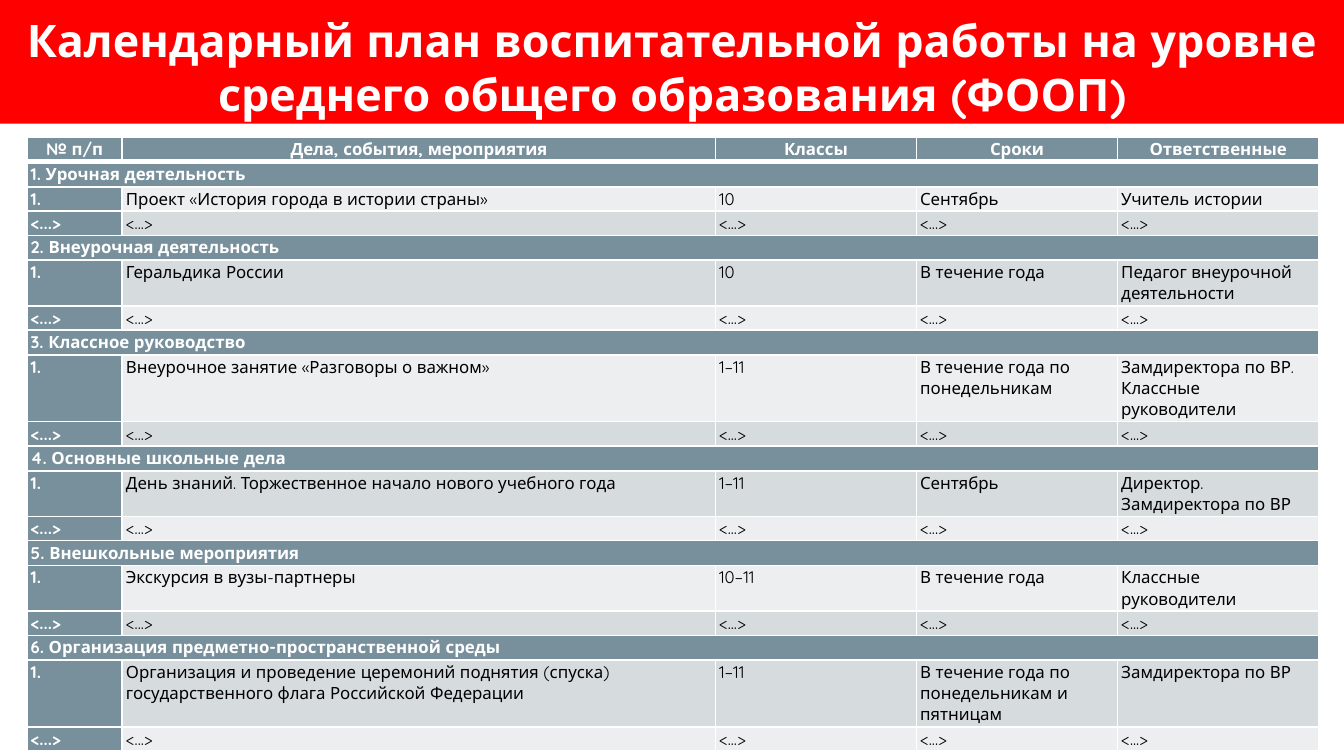
from lxml import etree
from pptx import Presentation
from pptx.dml.color import RGBColor
from pptx.enum.shapes import MSO_SHAPE
from pptx.enum.text import MSO_ANCHOR, PP_ALIGN
from pptx.oxml.ns import qn
from pptx.util import Cm, Pt

RECTANGLE = MSO_SHAPE.RECTANGLE
TOP = MSO_ANCHOR.TOP
LEFT, CENTER = PP_ALIGN.LEFT, PP_ALIGN.CENTER

RED = RGBColor(0xFF, 0x00, 0x00)
WHITE = RGBColor(0xFF, 0xFF, 0xFF)
BLACK = RGBColor(0x00, 0x00, 0x00)
SLATE = RGBColor(0x78, 0x90, 0x9C)
PALE = RGBColor(0xEC, 0xEE, 0xEF)
GREY = RGBColor(0xD6, 0xDB, 0xDE)

TITLE = "Календарный план воспитательной работы на уровне среднего общего образования (ФООП)"
HEADINGS = ["№ п/п", "Дела, события, мероприятия", "Классы", "Сроки", "Ответственные"]
MORE = ["<...>"] * len(HEADINGS)
COLUMN_WIDTHS = [1.8, 11.21, 3.8, 3.8, 3.8]
BAND_HEIGHT = 0.47
ENTRY_HEIGHT = 0.46
EXTRA_LINE = 0.4

SECTIONS = [
    ("Урочная деятельность", 1,
     ["Проект «История города в истории страны»", "10", "Сентябрь", "Учитель истории"]),
    ("Внеурочная деятельность", 2,
     ["Геральдика России", "10", "В течение года", "Педагог внеурочной деятельности"]),
    ("Классное руководство", 3,
     ["Внеурочное занятие «Разговоры о важном»", "1–11",
      "В течение года по понедельникам", "Замдиректора по ВР.\nКлассные руководители"]),
    ("Основные школьные дела", 2,
     ["День знаний. Торжественное начало нового учебного года", "1–11",
      "Сентябрь", "Директор.\nЗамдиректора по ВР"]),
    ("Внешкольные мероприятия", 2,
     ["Экскурсия в вузы-партнеры", "10–11", "В течение года", "Классные руководители"]),
    ("Организация предметно-пространственной среды", 3,
     ["Организация и проведение церемоний поднятия (спуска) "
      "государственного флага Российской Федерации", "1–11",
      "В течение года по понедельникам и пятницам", "Замдиректора по ВР"]),
]


class PlanSlide:
    font_name = "Quicksand"
    title_size = Pt(24)
    table_size = Pt(9)

    def __init__(self, presentation):
        self.slide = presentation.slides.add_slide(presentation.slide_layouts[6])

    def set_text(self, frame, text, size, color, bold, align):
        frame.text = text
        for paragraph in frame.paragraphs:
            paragraph.alignment = align
            paragraph.font.name = self.font_name
            paragraph.font.size = size
            paragraph.font.bold = bold
            paragraph.font.color.rgb = color

    def banner(self, text, width, height):
        banner = self.slide.shapes.add_shape(RECTANGLE, 0, 0, width, height)
        banner.shadow.inherit = False
        banner.fill.solid()
        banner.fill.fore_color.rgb = RED
        banner.line.fill.background()
        frame = banner.text_frame
        frame.word_wrap = True
        frame.vertical_anchor = TOP
        frame.margin_left = frame.margin_right = Cm(0.25)
        frame.margin_top = frame.margin_bottom = Cm(0.25)
        self.set_text(frame, text, self.title_size, WHITE, True, CENTER)

    def table(self, left, top, widths, heights):
        table = self.slide.shapes.add_table(
            len(heights), len(widths), left, top, Cm(sum(widths)), Cm(sum(heights))
        ).table
        for column, width in zip(table.columns, widths):
            column.width = Cm(width)
        for row, height in zip(table.rows, heights):
            row.height = Cm(height)
        return table

    def borders(self, cell, bottom):
        properties = cell._tc.get_or_add_tcPr()
        sides = [("a:lnL", 1), ("a:lnR", 1), ("a:lnT", 1), ("a:lnB", bottom)]
        for position, (side, points) in enumerate(sides):
            line = etree.Element(qn(side), w=str(Pt(points)))
            fill = etree.SubElement(line, qn("a:solidFill"))
            etree.SubElement(fill, qn("a:srgbClr"), val=str(WHITE))
            properties.insert(position, line)

    def cell(self, cell, text, fill, color=WHITE, bold=True, align=LEFT, bottom=1):
        cell.margin_left = cell.margin_right = Cm(0.07)
        cell.margin_top = cell.margin_bottom = Cm(0.03)
        cell.vertical_anchor = TOP
        cell.fill.solid()
        cell.fill.fore_color.rgb = fill
        self.borders(cell, bottom)
        self.set_text(cell.text_frame, text, self.table_size, color, bold, align)

    def heading_row(self, table, headings):
        for column, heading in enumerate(headings):
            self.cell(table.cell(0, column), heading, SLATE, align=CENTER, bottom=3)

    def section_row(self, table, row, text):
        first = table.cell(row, 0)
        first.merge(table.cell(row, len(table.columns) - 1))
        self.cell(first, text, SLATE)

    def entry_row(self, table, row, values):
        self.cell(table.cell(row, 0), values[0], SLATE)
        stripe = GREY if row % 2 else PALE
        for column, value in enumerate(values[1:], 1):
            self.cell(table.cell(row, column), value, stripe, BLACK, False)


def main():
    presentation = Presentation()
    presentation.slide_width = Cm(25.4)
    presentation.slide_height = Cm(14.29)

    plan = PlanSlide(presentation)
    plan.banner(TITLE, presentation.slide_width, Cm(2.34))

    heights = [BAND_HEIGHT]
    for _, lines, _ in SECTIONS:
        heights += [BAND_HEIGHT, ENTRY_HEIGHT + EXTRA_LINE * (lines - 1), ENTRY_HEIGHT]
    calendar = plan.table(Cm(0.51), Cm(2.59), COLUMN_WIDTHS, heights)

    plan.heading_row(calendar, HEADINGS)
    for number, (section, _, event) in enumerate(SECTIONS, 1):
        row = 3 * number - 2
        plan.section_row(calendar, row, f"{number}. {section}")
        plan.entry_row(calendar, row + 1, ["1."] + event)
        plan.entry_row(calendar, row + 2, MORE)

    presentation.save("out.pptx")


if __name__ == "__main__":
    main()
